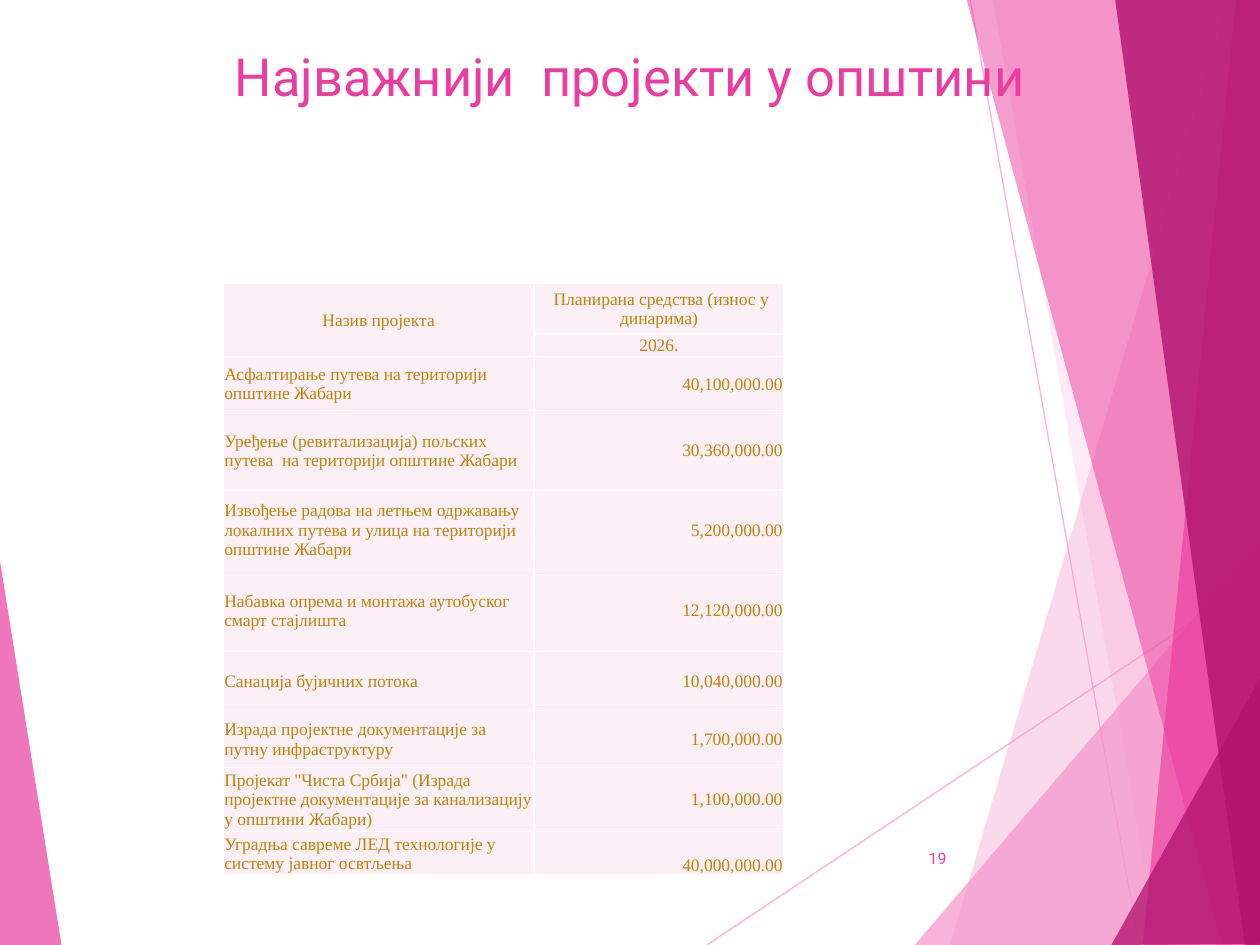
from dataclasses import dataclass

from lxml.etree import SubElement
from pptx import Presentation
from pptx.dml.color import RGBColor
from pptx.enum.shapes import MSO_CONNECTOR
from pptx.enum.text import MSO_ANCHOR, PP_ALIGN
from pptx.oxml import parse_xml
from pptx.oxml.ns import nsdecls, qn
from pptx.util import Inches, Pt


@dataclass(frozen=True)
class Theme:
    """Colours, fonts and type sizes of the slide."""
    light: str = "F496CB"
    pink: str = "EB3D9F"
    dark: str = "B2136D"
    cell: str = "FDEFF6"
    gold: str = "BE840B"
    white: str = "FFFFFF"
    sans: str = "Roboto"
    serif: str = "Times New Roman"
    title_size: float = 30
    table_size: float = 10
    number_size: float = 9


@dataclass(frozen=True)
class Box:
    """A region in inches."""
    left: float
    top: float
    width: float
    height: float

    def lengths(self):
        """Return left, top, width and height as lengths."""
        return [Inches(n) for n in (self.left, self.top, self.width, self.height)]

    def point(self, x, y):
        """Return a point given relative to the region."""
        return Inches(self.left + x), Inches(self.top + y)


THEME = Theme()

RAYS = [((5.61, 7.5), (10.01, 4.57)), ((7.7, 0), (9.04, 7.5))]

FACETS = [
    (THEME.light, 36, [(9.75, 0), (7.54, 7.5), (10.02, 7.51), (10.01, 0.01)]),
    (THEME.light, 20, [(7.88, -0.01), (9.19, 7.5), (10.01, 7.5), (10.01, -0.01)]),
    (THEME.light, 72, [(7.26, 7.5), (10, 4.29), (10.01, 7.5)]),
    (THEME.pink, 50, [(7.67, -0.01), (9.7, 7.5), (10.01, 7.49), (10.01, -0.01)]),
    (THEME.pink, 66, [(9.81, -0.01), (9.07, 7.5), (10.01, 7.5), (10, -0.01)]),
    (THEME.dark, 80, [(8.85, -0.01), (9.88, 7.5), (10.02, 7.5), (10, -0.01)]),
    (THEME.dark, 76, [(8.82, 7.5), (10.02, 5.35), (10.02, 7.49)]),
    (THEME.pink, 70, [(-0.01, 4.39), (0.49, 7.51), (-0.01, 7.5)]),
]

COLUMN_WIDTHS = [2.47, 1.98]
ROW_HEIGHTS = [0.4, 0.18, 0.43, 0.63, 0.63, 0.65, 0.47, 0.45, 0.48, 0.33]
HEADINGS = [("Назив пројекта", " Планирана средства (износ у динарима)"), ("", "2026.")]
PROJECTS = [
    ("Асфалтирање путева на територији општине Жабари", "40,100,000.00"),
    ("Уређење (ревитализација) пољских путева  на територији општине Жабари", "30,360,000.00"),
    ("Извођење радова на летњем одржавању локалних путева и улица на територији  општине Жабари",
     "5,200,000.00"),
    ("Набавка опрема и монтажа аутобуског смарт стајлишта", "12,120,000.00"),
    ("Санација бујичних потока", "10,040,000.00"),
    ("Израда пројектне документације за путну инфраструктуру", "1,700,000.00"),
    ('Пројекат "Чиста Србија" (Израда пројектне документације за канализацију у општини Жабари)',
     "1,100,000.00"),
    ("Уградња савреме ЛЕД технологије у систему јавног освтљења", "40,000,000.00"),
]


def set_alpha(fill, color, percent):
    """Give a solid fill a colour and an opacity."""
    fill.solid()
    fill.fore_color.rgb = RGBColor.from_string(color)
    color_element = fill._xPr.find(qn("a:solidFill"))[0]
    SubElement(color_element, qn("a:alpha"), val=str(percent * 1000))


def write(frame, text, size, font, color, align):
    """Write one run in the first paragraph of a text frame."""
    para = frame.paragraphs[0]
    para.alignment = align
    span = para.add_run()
    span.text = text
    span.font.size = Pt(size)
    span.font.name = font
    span.font.color.rgb = RGBColor.from_string(color)


def add_label(page, box, text, size, align, anchor):
    """Place a line of pink sans text in a box."""
    frame = page.shapes.add_textbox(*box.lengths()).text_frame
    frame.word_wrap = True
    frame.vertical_anchor = anchor
    write(frame, text, size, THEME.sans, THEME.pink, align)


def add_backdrop(page, box):
    """Draw the thin rays and the translucent facets."""
    for start, end in RAYS:
        ray = page.shapes.add_connector(
            MSO_CONNECTOR.STRAIGHT, *box.point(*start), *box.point(*end))
        ray.line.width = Pt(0.75)
        set_alpha(ray.line.fill, THEME.light, 70)
        SubElement(ray._element.spPr, qn("a:effectLst"))
    for color, opacity, points in FACETS:
        first, *rest = [box.point(*point) for point in points]
        builder = page.shapes.build_freeform(*first)
        builder.add_line_segments(rest, close=True)
        facet = builder.convert_to_shape()
        facet.shadow.inherit = False
        facet.line.fill.background()
        set_alpha(facet.fill, color, opacity)


def style_cell(cell, text, align, anchor):
    """Fill, border and write one table cell."""
    cell.margin_left = cell.margin_right = cell.margin_top = Inches(0.01)
    cell.margin_bottom = 0
    cell.vertical_anchor = anchor
    cell.fill.solid()
    cell.fill.fore_color.rgb = RGBColor.from_string(THEME.cell)
    properties = cell._tc.get_or_add_tcPr()
    for index, side in enumerate(("lnL", "lnR", "lnT", "lnB")):
        properties.insert(index, parse_xml(
            f'<a:{side} {nsdecls("a")} w="{Pt(1)}"><a:solidFill>'
            f'<a:srgbClr val="{THEME.white}"/></a:solidFill></a:{side}>'))
    if text:
        write(cell.text_frame, text, THEME.table_size, THEME.serif, THEME.gold, align)


def add_projects(page, box):
    """Place the table of projects and planned funds."""
    rows = HEADINGS + PROJECTS
    table = page.shapes.add_table(len(rows), len(COLUMN_WIDTHS), *box.lengths()).table
    table.first_row = table.horz_banding = False
    for column, width in zip(table.columns, COLUMN_WIDTHS):
        column.width = Inches(width)
    for row, height in zip(table.rows, ROW_HEIGHTS):
        row.height = Inches(height)
    for r, texts in enumerate(rows):
        for c, text in enumerate(texts):
            body_align = PP_ALIGN.RIGHT if c else PP_ALIGN.LEFT
            align = PP_ALIGN.CENTER if r < len(HEADINGS) else body_align
            is_last = r == len(rows) - 1 and c == 1
            anchor = MSO_ANCHOR.BOTTOM if is_last else MSO_ANCHOR.MIDDLE
            style_cell(table.cell(r, c), text, align, anchor)
    table.cell(0, 0).merge(table.cell(1, 0))


def main():
    """Build and save the slide."""
    deck = Presentation()
    deck.slide_width, deck.slide_height = Inches(10), Inches(7.5)
    page = deck.slides.add_slide(deck.slide_layouts[6])
    add_backdrop(page, Box(0, 0, 10, 7.5))
    add_label(page, Box(0.5, 0.3, 9, 0.96), "Најважнији  пројекти у општини",
              THEME.title_size, PP_ALIGN.CENTER, MSO_ANCHOR.TOP)
    add_projects(page, Box(1.77, 2.25, 4.45, 4.65))
    add_label(page, Box(7.05, 6.61, 0.56, 0.4), "19",
              THEME.number_size, PP_ALIGN.RIGHT, MSO_ANCHOR.MIDDLE)
    deck.save("out.pptx")


if __name__ == "__main__":
    main()
